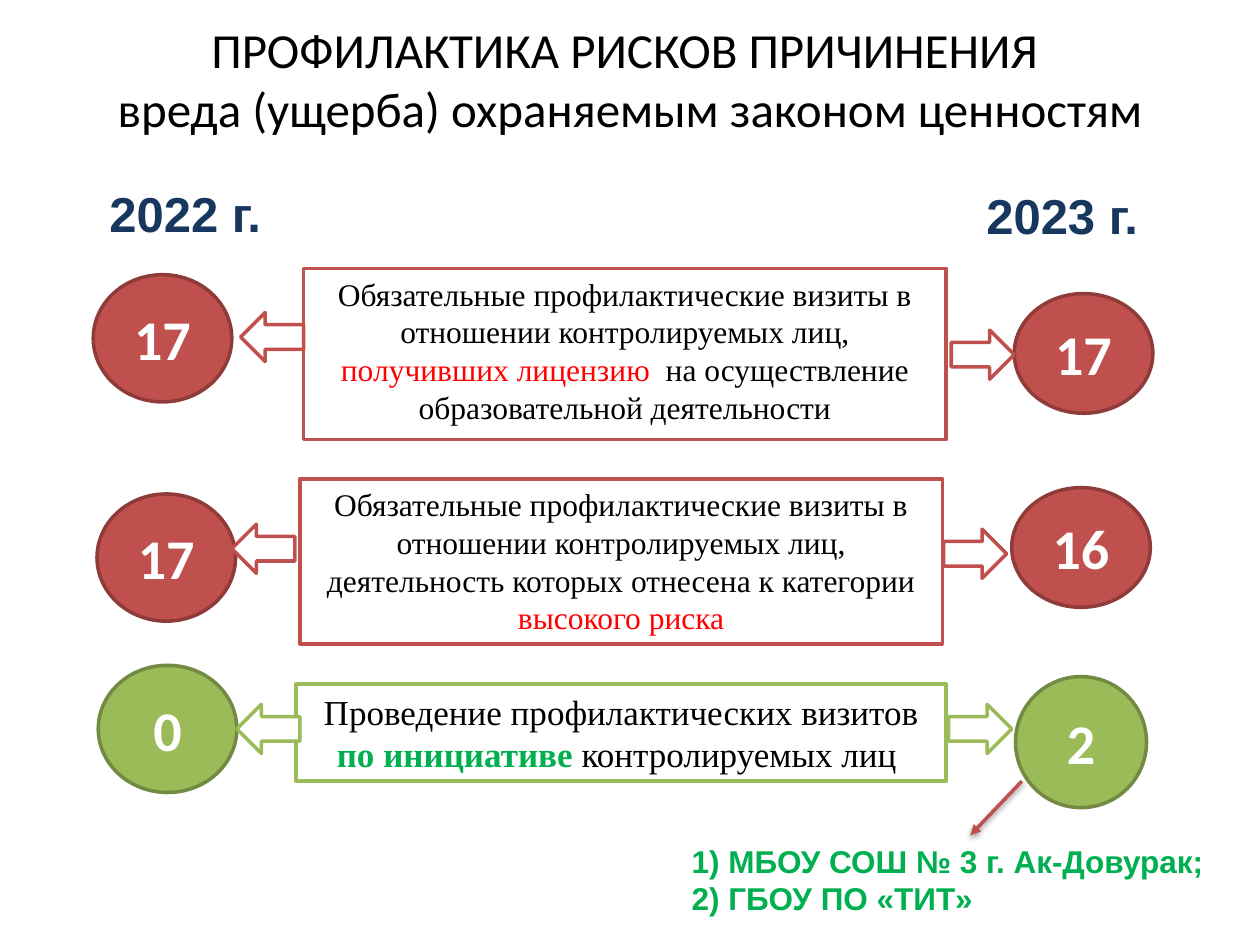
from lxml import etree
from pptx import Presentation
from pptx.dml.color import RGBColor
from pptx.enum.shapes import MSO_CONNECTOR, MSO_SHAPE
from pptx.enum.text import MSO_ANCHOR, PP_ALIGN
from pptx.oxml import parse_xml
from pptx.oxml.ns import nsdecls, qn
from pptx.util import Inches, Pt

RECT, OVAL = MSO_SHAPE.RECTANGLE, MSO_SHAPE.OVAL
LEFT_ARROW, RIGHT_ARROW = MSO_SHAPE.LEFT_ARROW, MSO_SHAPE.RIGHT_ARROW
TOP, MIDDLE = MSO_ANCHOR.TOP, MSO_ANCHOR.MIDDLE
LEFT, CENTER = PP_ALIGN.LEFT, PP_ALIGN.CENTER

WHITE, BLACK, NAVY = "FFFFFF", "000000", "17375E"
RED, DARK_RED, BRIGHT_RED = "C0504D", "8E3B39", "FF0000"
GREEN, DARK_GREEN, BRIGHT_GREEN = "9BBB59", "738A42", "00B050"
ARROW_SIZE = (0.5, 0.39)

# Content: a paragraph is a list of runs (text, colour, bold)
TITLE = [
    [("ПРОФИЛАКТИКА РИСКОВ ПРИЧИНЕНИЯ ", BLACK, False)],
    [("вреда (ущерба) охраняемым законом ценностям", BLACK, False)],
]
YEARS = [("2022 г.", (0.77, 1.41)), ("2023 г.", (7.73, 1.42))]
SCHOOLS = ["1) МБОУ СОШ № 3 г. Ак-Довурак;", "2) ГБОУ ПО «ТИТ»"]
VISITS = [
    {
        "runs": [
            ("Обязательные профилактические визиты в отношении "
             "контролируемых лиц, ", BLACK, False),
            ("получивших лицензию  ", BRIGHT_RED, False),
            ("на осуществление образовательной деятельности", BLACK, False),
        ],
        "box": (2.41, 2.13, 5.1, 1.36), "size": 18, "colors": (RED, DARK_RED),
        "counts": [("17", (0.74, 2.18, 1.1, 1.01)), ("17", (8.05, 2.33, 1.1, 0.95))],
        "arrows": [(1.91, 2.48), (7.55, 2.62)],
    },
    {
        "runs": [
            ("Обязательные профилактические визиты в отношении контролируемых "
             "лиц, деятельность которых отнесена к категории ", BLACK, False),
            ("высокого риска", BRIGHT_RED, False),
        ],
        "box": (2.38, 3.8, 5.1, 1.31), "size": 18, "colors": (RED, DARK_RED),
        "counts": [("17", (0.77, 3.92, 1.1, 1.01)), ("16", (8.03, 3.87, 1.1, 0.95))],
        "arrows": [(1.84, 4.16), (7.49, 4.2)],
    },
    {
        "runs": [
            ("Проведение профилактических визитов ", BLACK, False),
            ("по инициативе ", BRIGHT_GREEN, True),
            ("контролируемых лиц ", BLACK, False),
        ],
        "box": (2.35, 5.43, 5.16, 0.77), "size": 20, "colors": (GREEN, DARK_GREEN),
        "counts": [("0", (0.78, 5.28, 1.1, 1.01)), ("2", (8.06, 5.37, 1.04, 1.04))],
        "arrows": [(1.88, 5.59), (7.53, 5.59)],
    },
]

prs = Presentation()
prs.slide_width, prs.slide_height = Inches(10), Inches(7.5)
slide = prs.slides.add_slide(prs.slide_layouts[6])


def rgb(color):
    return RGBColor.from_string(color)


def inches(values):
    return [Inches(value) for value in values]


def write(shape, paragraphs, size, font, align, anchor, wrap=True):
    frame = shape.text_frame
    frame.word_wrap = wrap
    frame.vertical_anchor = anchor
    for index, runs in enumerate(paragraphs):
        paragraph = frame.add_paragraph() if index else frame.paragraphs[0]
        paragraph.alignment = align
        for text, color, bold in runs:
            run = paragraph.add_run()
            run.text = text
            run.font.name, run.font.size, run.font.bold = font, Pt(size), bold
            run.font.color.rgb = rgb(color)


def add_figure(kind, place, fill, line):
    figure = slide.shapes.add_shape(kind, *inches(place))
    figure.shadow.inherit = False
    figure.fill.solid()
    figure.fill.fore_color.rgb = rgb(fill)
    figure.line.color.rgb = rgb(line)
    figure.line.width = Pt(2)
    return figure


def add_label(place, lines, size, color):
    label = slide.shapes.add_textbox(*inches(place))
    write(label, [[(line, color, True)] for line in lines], size, "Arial", LEFT, TOP)


# Title
title = add_figure(RECT, (0, 0.08, 10, 1.08), WHITE, WHITE)
write(title, TITLE, 28, "Calibri", CENTER, MIDDLE, wrap=False)

# Visit kinds, each with its counts on both sides
for visit in VISITS:
    main, dark = visit["colors"]
    box = add_figure(RECT, visit["box"], WHITE, main)
    write(box, [visit["runs"]], visit["size"], "Times New Roman", CENTER, TOP)
    for count, place in visit["counts"]:
        circle = add_figure(OVAL, place, main, dark)
        write(circle, [[(count, WHITE, True)]], 32, "Calibri", CENTER, MIDDLE)
    for kind, corner in zip((LEFT_ARROW, RIGHT_ARROW), visit["arrows"]):
        add_figure(kind, corner + ARROW_SIZE, WHITE, main)

# Years and the schools behind the last count
for year, corner in YEARS:
    add_label(corner + (1.73, 0.57), [year], 28, NAVY)
add_label((5.39, 6.63, 4.61, 0.71), SCHOOLS, 18, BRIGHT_GREEN)

# Pointer from the last count to the schools
pointer = slide.shapes.add_connector(
    MSO_CONNECTOR.STRAIGHT, *inches((8.11, 6.2, 7.7, 6.63)))
pointer.line.color.rgb = rgb(RED)
pointer.line.width = Pt(2)
etree.SubElement(pointer.line._get_or_add_ln(), qn("a:tailEnd"), type="triangle")
pointer._element.spPr.append(parse_xml(
    f'<a:effectLst {nsdecls("a")}>'
    f'<a:outerShdw blurRad="{Pt(3.1)}" dist="{Pt(1.6)}" dir="5400000" rotWithShape="0">'
    f'<a:srgbClr val="{BLACK}"><a:alpha val="38000"/></a:srgbClr>'
    '</a:outerShdw></a:effectLst>'))

prs.save("out.pptx")
